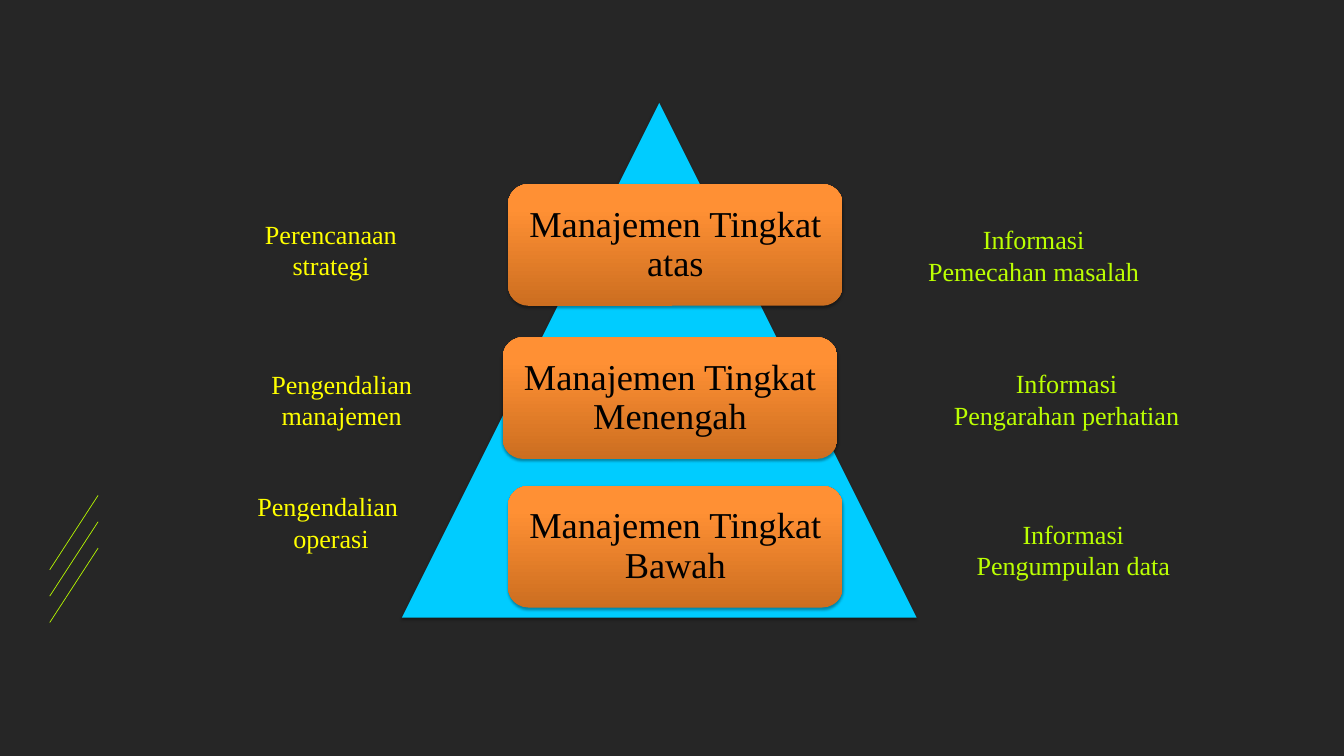
from lxml import etree
from pptx import Presentation
from pptx.dml.color import RGBColor
from pptx.enum.shapes import MSO_CONNECTOR, MSO_SHAPE
from pptx.enum.text import MSO_ANCHOR, PP_ALIGN
from pptx.oxml import parse_xml
from pptx.oxml.ns import nsdecls, qn
from pptx.util import Pt

STRAIGHT = MSO_CONNECTOR.STRAIGHT
TRIANGLE, ROUNDED = MSO_SHAPE.ISOSCELES_TRIANGLE, MSO_SHAPE.ROUNDED_RECTANGLE
TOP, MIDDLE, CENTER = MSO_ANCHOR.TOP, MSO_ANCHOR.MIDDLE, PP_ALIGN.CENTER

THEME = {
    "font": "Times New Roman",
    "label_size": 28,
    "level_size": 39,
    "back": RGBColor.from_string("262626"),
    "pyramid": RGBColor.from_string("00CCFF"),
    "level_dark": RGBColor.from_string("CC6E20"),
    "level_light": RGBColor.from_string("FF9034"),
    "level_text": RGBColor.from_string("000000"),
    "activity": RGBColor.from_string("FFFF00"),
    "information": RGBColor.from_string("BBFF02"),
    "stroke": RGBColor.from_string("B8FB00"),
}


def add_shadow(sp):
    sp.shadow.inherit = False
    effects = sp._element.spPr.find(qn("a:effectLst"))
    effects.append(parse_xml(
        f'<a:outerShdw {nsdecls("a")} blurRad="{Pt(3.1)}" dist="{Pt(1.8)}" dir="5400000" rotWithShape="0">'
        '<a:srgbClr val="000000"><a:alpha val="35000"/></a:srgbClr></a:outerShdw>'))


def write(sp, lines, size, color, margin, anchor, spacing):
    tf = sp.text_frame
    frame = {"word_wrap": True, "vertical_anchor": anchor}
    frame.update({f"margin_{side}": Pt(margin) for side in ("left", "top", "right", "bottom")})
    for name, value in frame.items():
        setattr(tf, name, value)
    for i, line in enumerate(lines):
        p = tf.add_paragraph() if i else tf.paragraphs[0]
        p.alignment, p.line_spacing = CENTER, spacing
        r = p.add_run()
        r.text = line
        for name, value in {"name": THEME["font"], "size": Pt(size)}.items():
            setattr(r.font, name, value)
        r.font.color.rgb = color


prs = Presentation()
prs.slide_width, prs.slide_height = Pt(1440), Pt(810)
s = prs.slides.add_slide(prs.slide_layouts[6])
s.background.fill.solid()
s.background.fill.fore_color.rgb = THEME["back"]

for i in range(3):
    y = 610.5 + 28.25 * i
    stroke = s.shapes.add_connector(STRAIGHT, Pt(53.3), Pt(y), Pt(105.1), Pt(y - 79.7))
    stroke.line.color.rgb = THEME["stroke"]
    stroke.line.width = Pt(0.75)
    etree.SubElement(stroke._element.spPr, qn("a:effectLst"))

pyramid = s.shapes.add_shape(TRIANGLE, Pt(430.6), Pt(110.2), Pt(551.5), Pt(551.5))
pyramid.fill.solid()
pyramid.fill.fore_color.rgb = THEME["pyramid"]
pyramid.line.fill.background()
add_shadow(pyramid)

levels = [
    (544.3, 197.3, "Manajemen Tingkat atas"),
    (538.6, 361.4, "Manajemen Tingkat Menengah"),
    (544.3, 520.6, "Manajemen Tingkat Bawah"),
]
for x, y, text in levels:
    sp = s.shapes.add_shape(ROUNDED, Pt(x), Pt(y), Pt(358.6), Pt(130.3))
    sp.fill.gradient()
    sp.fill.gradient_angle = 90
    stops = zip(sp.fill.gradient_stops, (0, 0.8), (THEME["level_dark"], THEME["level_light"]))
    for stop, position, color in stops:
        stop.position = position
        stop.color.rgb = color
    sp.line.fill.background()
    add_shadow(sp)
    write(sp, [text], THEME["level_size"], THEME["level_text"], 11.5, MIDDLE, 0.9)

labels = [
    (267.8, 234, 173.5, 51.8, "activity", ["Perencanaan", "strategi"]),
    (267.8, 394.6, 196.6, 49, "activity", ["Pengendalian manajemen"]),
    (252.7, 525.6, 203.8, 46.8, "activity", ["Pengendalian ", "operasi"]),
    (931.7, 239.8, 351.4, 49.7, "information", ["Informasi", "Pemecahan masalah"]),
    (952.6, 393.8, 380.2, 49.7, "information", ["Informasi", "Pengarahan perhatian"]),
    (952.6, 555.1, 394.6, 49.7, "information", ["Informasi", "Pengumpulan data"]),
]
for x, y, w, h, role, lines in labels:
    sp = s.shapes.add_textbox(Pt(x), Pt(y), Pt(w), Pt(h))
    write(sp, lines, THEME["label_size"], THEME[role], 0, TOP, 1.0)

prs.save("out.pptx")
